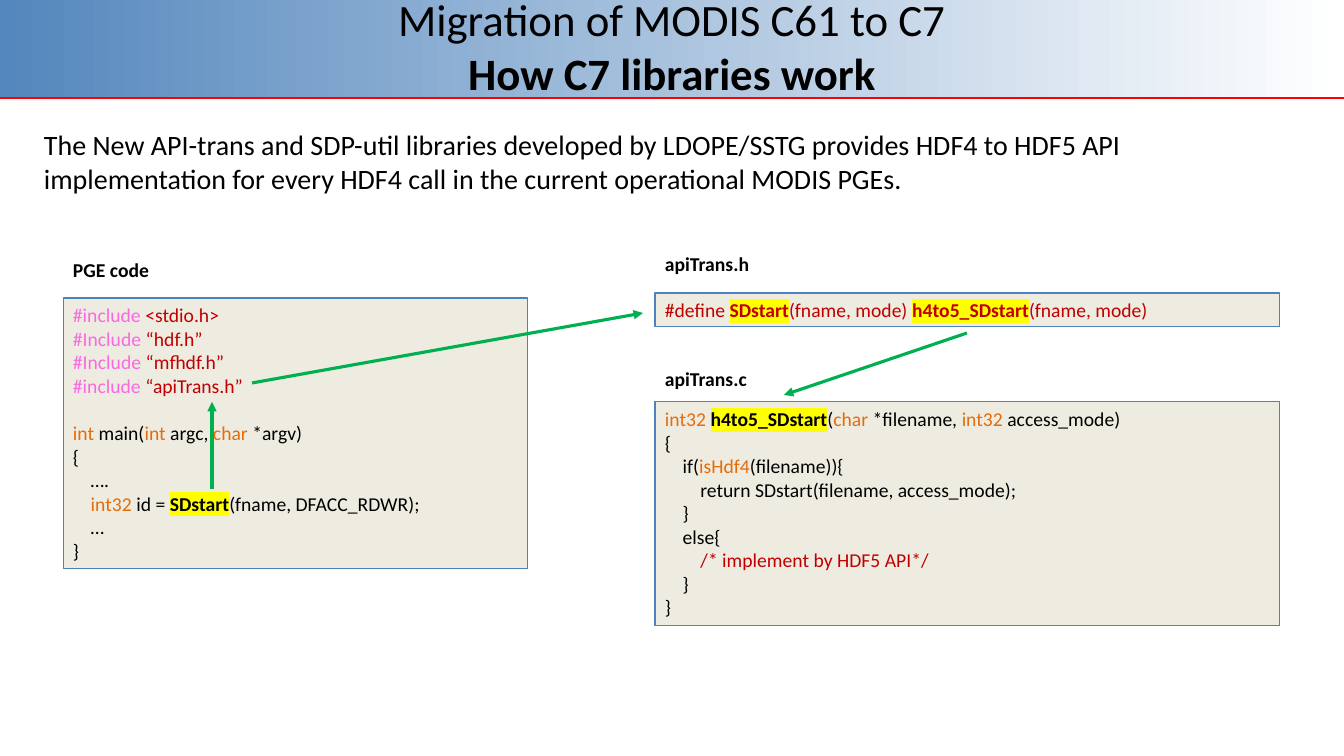
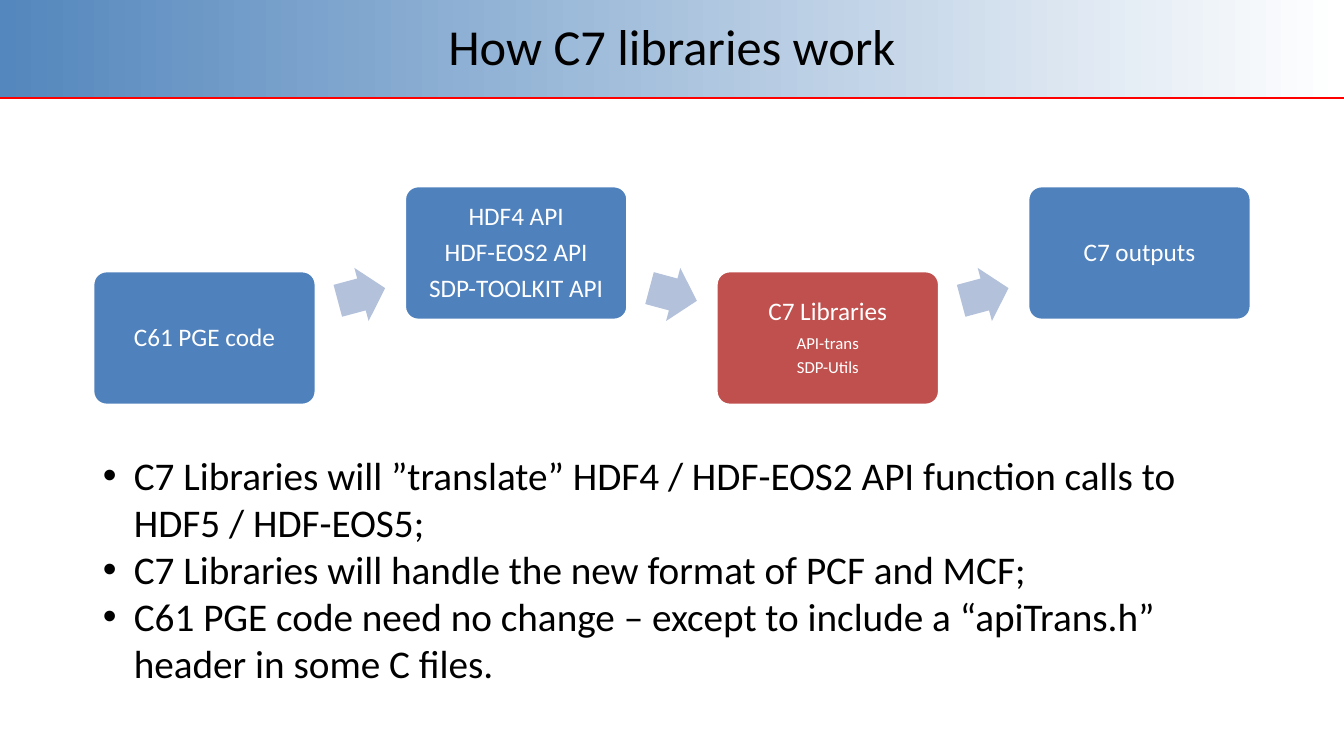
"""Build two slides on how the C7 libraries work."""
from dataclasses import dataclass

from lxml import etree
from pptx import Presentation, util as u
from pptx.dml.color import RGBColor
from pptx.enum import shapes, text
from pptx.oxml.ns import qn

SCALE = 12192000 / 1344
WIDTH, HEIGHT = 1344, 756


@dataclass(frozen=True)
class Theme:
    """Hold the colours, font and type sizes."""
    font: str = "Calibri"
    ink: str = "000000"
    white: str = "FFFFFF"
    band: str = "5487BD"
    rule: str = "FF0000"
    panel: str = "EEECE1"
    blue: str = "4F81BD"
    red: str = "C0504D"
    pale: str = "B3C1DB"
    green: str = "00B050"
    pink: str = "FB69E0"
    orange: str = "E46C0A"
    crimson: str = "C00000"
    yellow: str = "FFFF00"
    title: int = 36
    title_small: int = 32
    bullet: int = 28
    intro: int = 20
    card: int = 18
    code: int = 14
    detail: int = 12


T = Theme()
STYLES = {
    "plain": {},
    "bold": {"bold": True},
    "pre": {"color": T.pink},
    "type": {"color": T.orange},
    "red": {"color": T.crimson},
    "mark": {"bold": True, "mark": T.yellow},
    "redmark": {"color": T.crimson, "bold": True, "mark": T.yellow},
}
PGE_CODE = [
    [("pre", "#include "), ("red", "<stdio.h>")],
    [("pre", "#Include "), ("red", "“hdf.h”")],
    [("pre", "#Include "), ("red", "“mfhdf.h”")],
    [("pre", "#include "), ("red", "“apiTrans.h”")],
    [("type", "int"), " main(", ("type", "int "), "argc, ", ("type", "char"), " *argv)"],
    ["{"],
    ["    …."],
    ["    ", ("type", "int32"), " id = ", ("mark", "SDstart"), "(fname, DFACC_RDWR);"],
    ["    …"],
    ["}"],
]
HEADER_CODE = [
    [("red", "#define "), ("redmark", "SDstart"), ("red", "(fname, mode) "),
     ("redmark", "h4to5_SDstart"), ("red", "(fname, mode)")],
]
SOURCE_CODE = [
    [("type", "int32 "), ("mark", "h4to5_SDstart"), "(", ("type", "char"),
     " *filename, ", ("type", "int32 "), "access_mode)"],
    ["{"],
    ["    if(", ("type", "isHdf4"), "(filename)){"],
    ["        return SDstart(filename, access_mode);"],
    ["    }"],
    ["    else{"],
    ["        ", ("red", "/* implement by HDF5 API*/")],
    ["    }"],
    ["}"],
]
CARDS = [
    (["C61 PGE code"], T.blue),
    (["HDF4 API", "HDF-EOS2 API", "SDP-TOOLKIT API"], T.blue),
    (["C7 Libraries", "API-trans", "SDP-Utils"], T.red),
    (["C7 outputs"], T.blue),
]
BULLETS = [
    "C7 Libraries will ”translate” HDF4 / HDF-EOS2 API function calls to HDF5 / HDF-EOS5;",
    "C7 Libraries will handle the new format of PCF and MCF;",
    "C61 PGE code need no change – except to include a “apiTrans.h” header in some C files.",
]


def px(*values):
    """Turn px lengths into EMU."""
    return [u.Emu(round(v * SCALE)) for v in values]


def rgb(color):
    """Turn a hex string into a colour."""
    return RGBColor.from_string(color)


def assign(target, values):
    """Set each named value on the target."""
    for name, value in values.items():
        setattr(target, name, value)


def add_run(p, content, size, color=T.ink, bold=False, mark=None):
    """Append one formatted run to a paragraph."""
    r = p.add_run()
    r.text = content
    assign(r.font, {"name": T.font, "size": u.Pt(size), "bold": bold})
    r.font.color.rgb = rgb(color)
    if mark:
        latin = r.font._element.find(qn("a:latin"))
        highlight = etree.Element(qn("a:highlight"))
        etree.SubElement(highlight, qn("a:srgbClr")).set("val", mark)
        latin.addprevious(highlight)


def paragraphs(tf, count):
    """Return the given number of paragraphs of a text frame."""
    return [tf.paragraphs[0]] + [tf.add_paragraph() for _ in range(count - 1)]


def write_lines(tf, lines, size):
    """Write lines of plain strings or (style, text) pairs."""
    for p, line in zip(paragraphs(tf, len(lines)), lines):
        p.alignment = text.PP_ALIGN.LEFT
        for part in line:
            style, content = ("plain", part) if isinstance(part, str) else part
            add_run(p, content, size, **STYLES[style])


def add_text(s, box):
    """Add a wrapping text box and return its frame."""
    tf = s.shapes.add_textbox(*px(*box)).text_frame
    tf.word_wrap = True
    return tf


def add_box(s, kind, box, fill, line=None, width=0):
    """Add a flat preset shape."""
    sp = s.shapes.add_shape(kind, *px(*box))
    sp.shadow.inherit = False
    sp.fill.solid()
    sp.fill.fore_color.rgb = rgb(fill)
    if line:
        sp.line.color.rgb = rgb(line)
        sp.line.width = u.Pt(width)
    else:
        sp.line.fill.background()
    return sp


def add_line(s, ends, color, width, arrow=False):
    """Add a straight line, with an arrowhead at its end if wanted."""
    c = s.shapes.add_connector(shapes.MSO_CONNECTOR.STRAIGHT, *px(*ends))
    c.line.color.rgb = rgb(color)
    c.line.width = u.Pt(width)
    if arrow:
        etree.SubElement(c.line._get_or_add_ln(), qn("a:tailEnd")).set("type", "triangle")
    etree.SubElement(c._element.spPr, qn("a:effectLst"))


def header(s, lines, size):
    """Draw the gradient band, its rule and the title."""
    band = add_box(s, shapes.MSO_SHAPE.RECTANGLE, (0, -1, WIDTH, 98), T.band)
    band.fill.gradient()
    band.fill.gradient_angle = 0
    for stop, color in zip(band.fill.gradient_stops, (T.band, T.white)):
        stop.color.rgb = rgb(color)
    add_line(s, (0, 98, WIDTH, 98), T.rule, 1.25)
    tf = add_text(s, (67, 0, 1210, 91))
    tf.vertical_anchor = text.MSO_ANCHOR.MIDDLE
    p = tf.paragraphs[0]
    p.alignment = text.PP_ALIGN.CENTER
    for i, line in enumerate(lines):
        if i:
            p.add_line_break()
        add_run(p, line, size, bold=i > 0)


def code_panel(s, box, label, rise, lines):
    """Draw a code box with a label above it and return its frame."""
    x, y, _, _ = box
    write_lines(add_text(s, (x, y - rise, 129, 34)), [[("bold", label)]], T.code)
    sp = add_box(s, shapes.MSO_SHAPE.RECTANGLE, box, T.panel, T.blue, 0.75)
    tf = sp.text_frame
    assign(tf, {"word_wrap": True, "vertical_anchor": text.MSO_ANCHOR.TOP})
    write_lines(tf, lines, T.code)
    return tf


def flow(s, box):
    """Draw the staggered row of cards joined by tilted arrows."""
    left, top, width, height = box
    card_w, card_h, pad = 223, 134, 11
    step = (width - card_w) / (len(CARDS) - 1)
    for i, (lines, fill) in enumerate(CARDS):
        x = left + i * step
        y = top if i % 2 else top + height - card_h
        sp = add_box(s, shapes.MSO_SHAPE.ROUNDED_RECTANGLE, (x, y, card_w, card_h),
                     fill, T.white, 2)
        sp.adjustments[0] = 0.1
        tf = sp.text_frame
        inset, = px(pad)
        assign(tf, {"word_wrap": True, "vertical_anchor": text.MSO_ANCHOR.MIDDLE,
                    "margin_left": inset, "margin_right": inset,
                    "margin_top": inset, "margin_bottom": inset})
        for j, (p, line) in enumerate(zip(paragraphs(tf, len(lines)), lines)):
            size = T.detail if j and fill == T.red else T.card
            assign(p, {"alignment": text.PP_ALIGN.CENTER, "line_spacing": 0.9,
                       "space_after": u.Pt(size * 0.35)})
            add_run(p, line, size, T.white)
        if i < len(CARDS) - 1:
            arrow = add_box(s, shapes.MSO_SHAPE.RIGHT_ARROW,
                            (x + 244, top + 81, 49, 55), T.pale)
            arrow.rotation = 15 if i % 2 else -15
            arrow.adjustments[0] = 0.6


def bullet_list(s, box):
    """Write the bulleted statements."""
    tf = add_text(s, box)
    indent, = px(31)
    for p, line in zip(paragraphs(tf, len(BULLETS)), BULLETS):
        pPr = p._p.get_or_add_pPr()
        pPr.set("marL", str(indent))
        pPr.set("indent", str(-indent))
        etree.SubElement(pPr, qn("a:buFont")).set("typeface", "Arial")
        etree.SubElement(pPr, qn("a:buChar")).set("char", "•")
        add_run(p, line, T.bullet)


def code_slide(s):
    """Show how a call in PGE code reaches the library."""
    header(s, ["Migration of MODIS C61 to C7", "How C7 libraries work"], T.title_small)
    intro = ("The New API-trans and SDP-util libraries developed by LDOPE/SSTG provides "
             "HDF4 to HDF5 API implementation for every HDF4 call in the current "
             "operational MODIS PGEs.")
    write_lines(add_text(s, (34, 123, 1174, 78)), [[intro]], T.intro)
    tf = code_panel(s, (63, 298, 465, 271), "PGE code", 45, PGE_CODE)
    tf.paragraphs[4].space_before = u.Pt(17)
    code_panel(s, (655, 293, 625, 34), "apiTrans.h", 46, HEADER_CODE)
    code_panel(s, (655, 402, 625, 224), "apiTrans.c", 40, SOURCE_CODE)
    for ends in ((252, 383, 643, 313), (212, 489, 212, 402), (967, 333, 784, 395)):
        add_line(s, ends, T.green, 2.25, arrow=True)


def flow_slide(s):
    """Show the path from PGE code to outputs."""
    header(s, ["How C7 libraries work"], T.title)
    flow(s, (93, 186, 1158, 219))
    bullet_list(s, (93, 446, 1186, 248))


def main():
    """Build and save the presentation."""
    prs = Presentation()
    prs.slide_width, prs.slide_height = px(WIDTH, HEIGHT)
    for build in (code_slide, flow_slide):
        build(prs.slides.add_slide(prs.slide_layouts[6]))
    prs.save("out.pptx")


if __name__ == "__main__":
    main()
